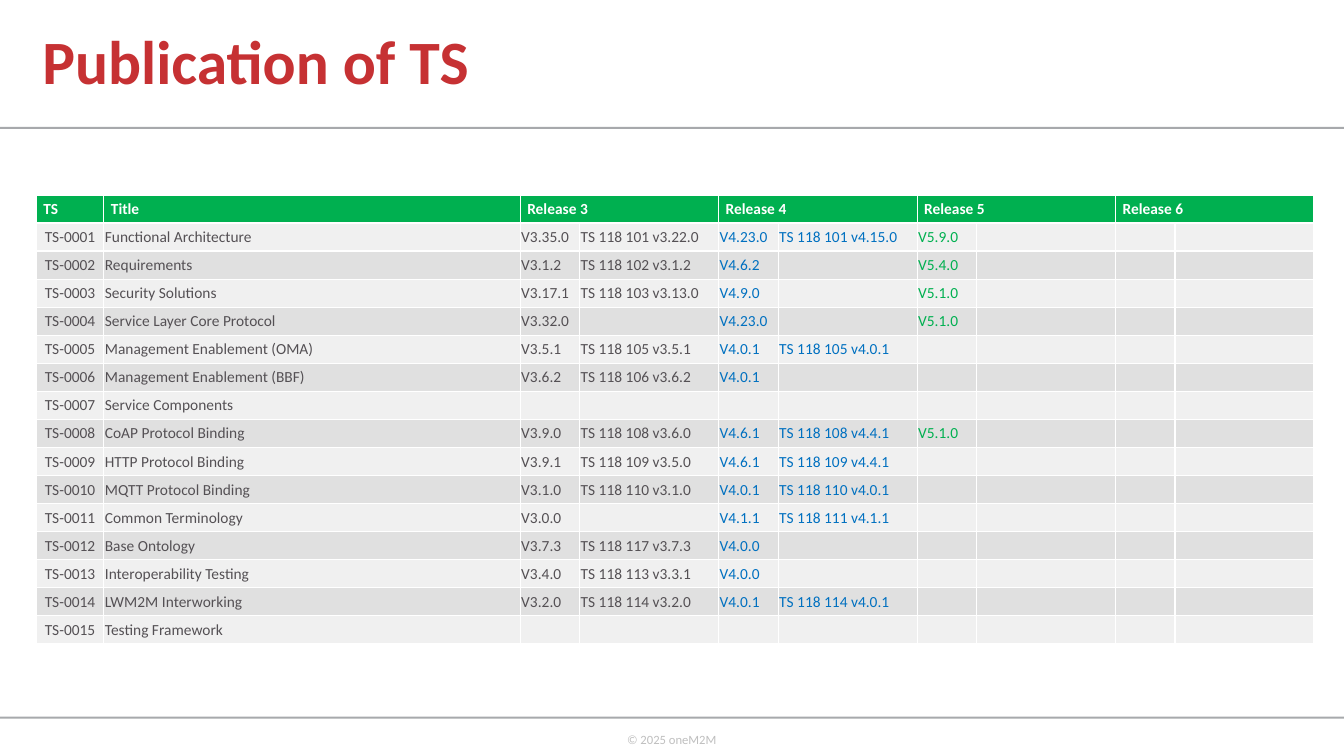
from lxml import etree
from pptx import Presentation, util as u
from pptx.dml import color
from pptx.enum import shapes, text
from pptx.oxml import ns

COLORS = {
    "title": "C63133", "rule": "A7A9AC", "footer": "BFBFBF", "white": "FFFFFF",
    "green": "00B050", "blue": "0070C0", "body": "545054",
    "odd": "F0F0F0", "even": "E0E0E0",
}
COLUMN_WIDTHS = [5.03, 30.98] + [4.43, 10.34] * 4
COLUMN_COLORS = ["body"] * 4 + ["blue"] * 2 + ["green"] * 4
ROW_HEIGHT = 3.71
HEADERS = ["TS", "Title", "Release 3", "", "Release 4", "", "Release 5", "", "Release 6", ""]
SPECIFICATIONS = [
    ["Functional Architecture", "V3.35.0", "TS 118 101 v3.22.0", "V4.23.0", "TS 118 101 v4.15.0", "V5.9.0"],
    ["Requirements", "V3.1.2", "TS 118 102 v3.1.2", "V4.6.2", "", "V5.4.0"],
    ["Security Solutions", "V3.17.1", "TS 118 103 v3.13.0", "V4.9.0", "", "V5.1.0"],
    ["Service Layer Core Protocol", "V3.32.0", "", "V4.23.0", "", "V5.1.0"],
    ["Management Enablement (OMA)", "V3.5.1", "TS 118 105 v3.5.1", "V4.0.1", "TS 118 105 v4.0.1"],
    ["Management Enablement (BBF)", "V3.6.2", "TS 118 106 v3.6.2", "V4.0.1"],
    ["Service Components"],
    ["CoAP Protocol Binding", "V3.9.0", "TS 118 108 v3.6.0", "V4.6.1", "TS 118 108 v4.4.1", "V5.1.0"],
    ["HTTP Protocol Binding", "V3.9.1", "TS 118 109 v3.5.0", "V4.6.1", "TS 118 109 v4.4.1"],
    ["MQTT Protocol Binding", "V3.1.0", "TS 118 110 v3.1.0", "V4.0.1", "TS 118 110 v4.0.1"],
    ["Common Terminology", "V3.0.0", "", "V4.1.1", "TS 118 111 v4.1.1"],
    ["Base Ontology", "V3.7.3", "TS 118 117 v3.7.3", "V4.0.0"],
    ["Interoperability Testing", "V3.4.0", "TS 118 113 v3.3.1", "V4.0.0"],
    ["LWM2M Interworking", "V3.2.0", "TS 118 114 v3.2.0", "V4.0.1", "TS 118 114 v4.0.1"],
    ["Testing Framework"],
]


class SlideBuilder:
    font = "Calibri"

    def __init__(self, presentation):
        self.width = presentation.slide_width
        self.height = presentation.slide_height
        self.slide = presentation.slides.add_slide(presentation.slide_layouts[6])

    def across(self, percent):
        return round(self.width * percent / 100)

    def down(self, percent):
        return round(self.height * percent / 100)

    def box(self, left, top, width, height):
        return self.across(left), self.down(top), self.across(width), self.down(height)

    def rgb(self, name):
        return color.RGBColor.from_string(COLORS[name])

    def style(self, paragraph, size, color_name, bold=False):
        for run in paragraph.runs:
            run.font.name = self.font
            run.font.size = u.Pt(size)
            run.font.bold = bold
            run.font.color.rgb = self.rgb(color_name)

    def rule(self, top):
        shape = self.slide.shapes.add_shape(
            shapes.MSO_SHAPE.RECTANGLE, *self.box(0, top, 100, 0.27))
        shape.shadow.inherit = False
        shape.fill.solid()
        shape.fill.fore_color.rgb = self.rgb("rule")
        shape.line.fill.background()

    def label(self, words, place, size, color_name, bold=False, wrap=True, spacing=1.0):
        frame = self.slide.shapes.add_textbox(*self.box(*place)).text_frame
        frame.text = words
        frame.word_wrap = wrap
        frame.vertical_anchor = text.MSO_ANCHOR.MIDDLE if wrap else text.MSO_ANCHOR.TOP
        frame.margin_left = frame.margin_right = u.Inches(0.05)
        frame.margin_top = frame.margin_bottom = u.Inches(0.05)
        paragraph = frame.paragraphs[0]
        paragraph.line_spacing = spacing
        self.style(paragraph, size, color_name, bold)

    def borders(self, cell):
        properties = cell._tc.get_or_add_tcPr()
        for side in ("L", "R", "T", "B"):
            line = etree.SubElement(properties, ns.qn(f"a:ln{side}"), w=str(u.Pt(1)))
            fill = etree.SubElement(line, ns.qn("a:solidFill"))
            etree.SubElement(fill, ns.qn("a:srgbClr"), val=COLORS["white"])

    def cell(self, cell, words, fill, color_name, header=False, centered=False):
        self.borders(cell)
        cell.fill.solid()
        cell.fill.fore_color.rgb = self.rgb(fill)
        cell.vertical_anchor = text.MSO_ANCHOR.MIDDLE
        cell.margin_left = cell.margin_right = u.Inches(0.07 if header else 0.01)
        cell.margin_top = u.Inches(0 if header else 0.01)
        cell.margin_bottom = 0
        paragraph = cell.text_frame.paragraphs[0]
        if words:
            paragraph.text = words
            self.style(paragraph, 11, color_name, header)
        else:
            etree.SubElement(paragraph._p, ns.qn("a:endParaRPr"), sz="1100")
        if centered:
            paragraph.alignment = text.PP_ALIGN.CENTER

    def table(self, left, top, headers, rows):
        count = len(rows) + 1
        place = self.box(left, top, sum(COLUMN_WIDTHS), ROW_HEIGHT * count)
        table = self.slide.shapes.add_table(count, len(headers), *place).table
        table.horz_banding = False
        for column, width in zip(table.columns, COLUMN_WIDTHS):
            column.width = self.across(width)
        for row in table.rows:
            row.height = self.down(ROW_HEIGHT)
        for column, words in enumerate(headers):
            self.cell(table.cell(0, column), words, "green", "white", header=True)
        for column in range(2, len(headers), 2):
            table.cell(0, column).merge(table.cell(0, column + 1))
        for number, values in enumerate(rows, 1):
            values = [f"TS-{number:04}"] + values
            values += [""] * (len(headers) - len(values))
            for column, words in enumerate(values):
                self.cell(table.cell(number, column), words, "odd" if number % 2 else "even",
                          COLUMN_COLORS[column], centered=column == 0)


def main():
    presentation = Presentation()
    presentation.slide_width = u.Inches(13.33)
    presentation.slide_height = u.Inches(7.5)
    builder = SlideBuilder(presentation)
    for top in (16.8, 94.8):
        builder.rule(top)
    builder.label("© 2025 oneM2M", (46.29, 96.13, 7.65, 3.33), 9, "footer", wrap=False)
    builder.label("Publication of TS", (2.78, 0, 64.44, 17.07), 44, "title", bold=True, spacing=0.9)
    builder.table(2.7, 25.8, HEADERS, SPECIFICATIONS)
    presentation.save("out.pptx")


if __name__ == "__main__":
    main()
